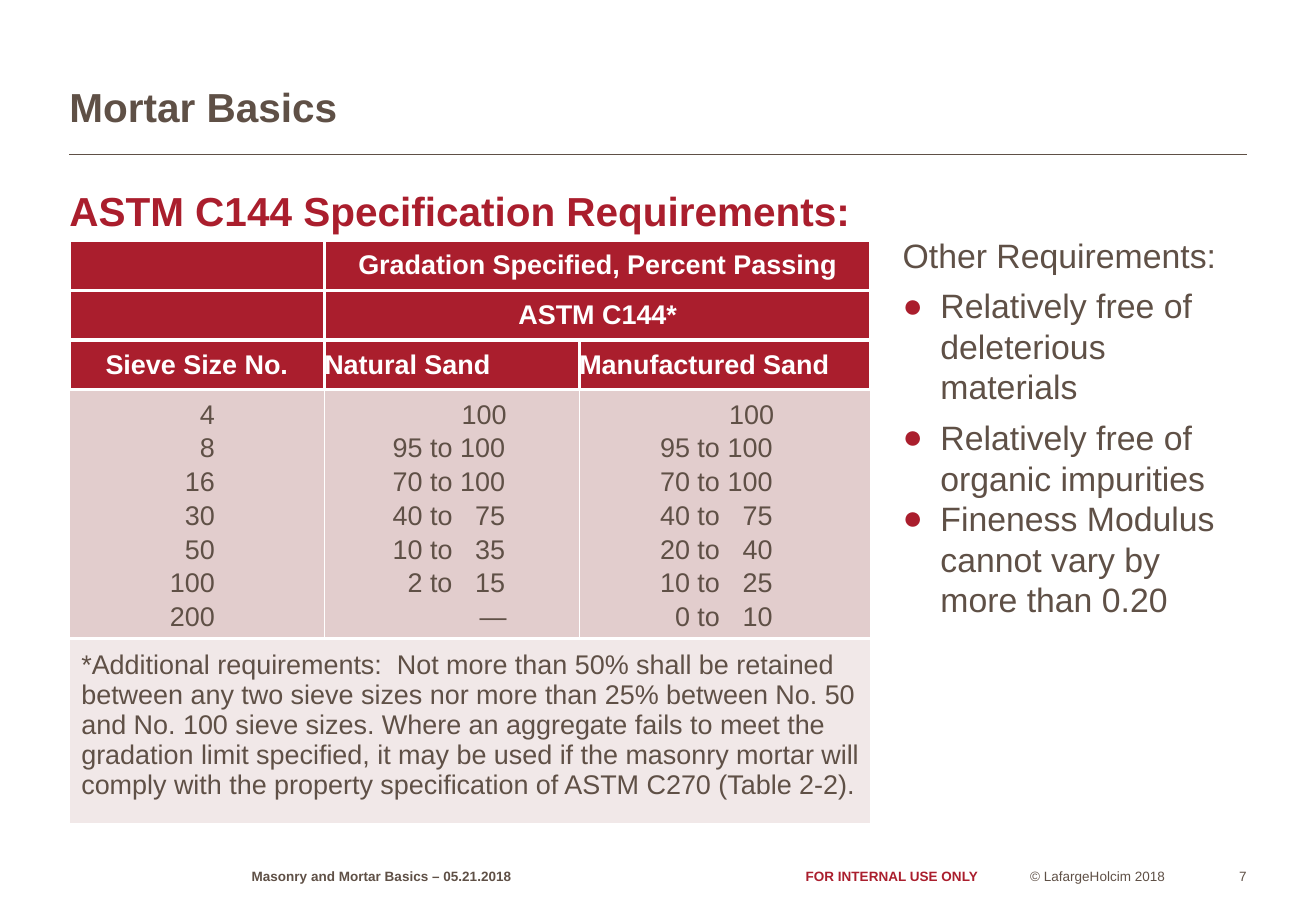
from dataclasses import dataclass

from lxml import etree
from pptx import Presentation
from pptx import util as u
from pptx.dml.color import RGBColor
from pptx.enum import shapes, text
from pptx.oxml import ns

COLORS = {"brown": "5F5046", "red": "AA1E2D", "white": "FFFFFF",
          "rose": "E2CDCD", "pale": "F1E8E8"}
FONT = "Arial"
LEFT, RIGHT = 1.45, 26.06
TABLE_TOP = 5.03
COLUMN_WIDTHS = (5.33, 5.33, 6.1)
ROW_HEIGHTS = (1.04, 1.04, 1.04, 5.18, 3.87)
DATA_ROW, NOTE_ROW = 3, 4
UPPER_LIMIT_WIDTH = 1.1
NO_INSETS = (0, 0, 0, 0)
CENTER, ALIGN_LEFT, ALIGN_RIGHT = (
    text.PP_ALIGN.CENTER, text.PP_ALIGN.LEFT, text.PP_ALIGN.RIGHT)
TOP, MIDDLE, BOTTOM = (
    text.MSO_ANCHOR.TOP, text.MSO_ANCHOR.MIDDLE, text.MSO_ANCHOR.BOTTOM)


@dataclass(frozen=True)
class Label:
    wording: str
    left: float
    top: float
    width: float
    height: float
    size: float = 8
    color: str = "brown"
    bold: bool = False
    align: text.PP_ALIGN = ALIGN_LEFT
    anchor: text.MSO_ANCHOR = BOTTOM
    insets: tuple = NO_INSETS
    line_spacing: float = 1.0


@dataclass(frozen=True)
class Header:
    wording: str
    row: int
    column: int
    align: text.PP_ALIGN = CENTER


@dataclass(frozen=True)
class DataColumn:
    right_inset: float
    values: tuple


@dataclass(frozen=True)
class Requirement:
    wording: str
    space_before: float


FOOTER = {"top": 18.03, "height": 0.46}
LABELS = (
    Label("© LafargeHolcim 2018", 21.01, width=3.35, align=ALIGN_RIGHT, **FOOTER),
    Label("Masonry and Mortar Basics – 05.21.2018", 5.26, width=10.39,
          bold=True, **FOOTER),
    Label("FOR INTERNAL USE ONLY", 15.85, width=4.6, color="red", bold=True,
          align=ALIGN_RIGHT, **FOOTER),
    Label("7", 24.87, width=1.19, align=ALIGN_RIGHT, **FOOTER),
    Label("Mortar Basics", LEFT, 0.53, 24.61, 2.36, 24, bold=True,
          insets=(0, 0, 0.13, 0.13), line_spacing=0.95),
    Label("ASTM C144 Specification Requirements:", LEFT, 3.89, 24.56, 1.7, 24,
          "red", True, anchor=TOP, insets=(0, 0, 0.25, 0.13)),
)
HEADERS = (
    Header("Gradation Specified, Percent Passing", 0, 1),
    Header("ASTM C144*", 1, 1),
    Header("Sieve Size No.", 2, 0),
    Header("Natural Sand", 2, 1, ALIGN_LEFT),
    Header("Manufactured Sand", 2, 2, ALIGN_LEFT),
)
DATA_COLUMNS = (
    DataColumn(2.29, ("4", "8", "16", "30", "50", "100", "200")),
    DataColumn(1.52, ("100", "95 to 100", "70 to 100", "40 to 75",
                      "10 to 35", "2 to 15", "—")),
    DataColumn(2.03, ("100", "95 to 100", "70 to 100", "40 to 75",
                      "20 to 40", "10 to 25", "0 to 10")),
)
NOTE = ("*Additional requirements:  Not more than 50% shall be retained between any "
        "two sieve sizes nor more than 25% between No. 50 and No. 100 sieve sizes. "
        "Where an aggregate fails to meet the gradation limit specified, it may be "
        "used if the masonry mortar will comply with the property specification of "
        "ASTM C270 (Table 2-2).")
REQUIREMENTS = (
    Requirement("Relatively free of deleterious materials", 6),
    Requirement("Relatively free of organic impurities", 6),
    Requirement("Fineness Modulus cannot vary by more than 0.20", 0),
)


def rgb(name: str) -> RGBColor:
    return RGBColor.from_string(COLORS[name])


def add_element(parent, tag: str, **attributes: str):
    return etree.SubElement(parent, ns.qn(tag), attributes)


def add_run(paragraph, wording: str, size: float, color: str, bold: bool = False) -> None:
    run = paragraph.add_run()
    run.text = wording
    run.font.name, run.font.size, run.font.bold = FONT, u.Pt(size), bold
    run.font.color.rgb = rgb(color)


def set_insets(holder, insets: tuple) -> None:
    """Set left, top, right and bottom margins of a cell or a text frame."""
    (holder.margin_left, holder.margin_top,
     holder.margin_right, holder.margin_bottom) = map(u.Cm, insets)


def add_frame(slide, left: float, top: float, width: float, height: float):
    frame = slide.shapes.add_textbox(*map(u.Cm, (left, top, width, height))).text_frame
    frame.word_wrap = True
    return frame


def add_label(slide, label: Label) -> None:
    frame = add_frame(slide, label.left, label.top, label.width, label.height)
    frame.vertical_anchor = label.anchor
    set_insets(frame, label.insets)
    paragraph = frame.paragraphs[0]
    paragraph.alignment = label.align
    paragraph.line_spacing = label.line_spacing
    add_run(paragraph, label.wording, label.size, label.color, label.bold)


def add_title_rule(slide) -> None:
    rule = slide.shapes.add_connector(
        shapes.MSO_CONNECTOR.STRAIGHT, *map(u.Cm, (LEFT, 3.23, RIGHT, 3.23)))
    rule.line.color.rgb = rgb("brown")
    rule.line.width = u.Pt(1)
    add_element(rule._element.spPr, "a:effectLst")


def add_requirements(slide) -> None:
    frame = add_frame(slide, 18.62, 4.78, 7.62, 8.38)
    add_run(frame.paragraphs[0], "Other Requirements:", 20, "brown")
    indent = u.Cm(0.79)
    for requirement in REQUIREMENTS:
        paragraph = frame.add_paragraph()
        properties = paragraph._p.get_or_add_pPr()
        properties.set("marL", str(indent))
        properties.set("indent", str(-indent))
        add_element(add_element(properties, "a:buClr"), "a:srgbClr", val=COLORS["red"])
        add_element(properties, "a:buFont", typeface=FONT)
        add_element(properties, "a:buChar", char="●")
        paragraph.space_before = u.Pt(requirement.space_before)
        add_run(paragraph, requirement.wording, 20, "brown")


def style_cell(cell, row: int) -> None:
    side = 2.25 if row < DATA_ROW else 1
    for edge, width in (("L", side), ("R", side), ("T", 2.25), ("B", 2.25)):
        line = add_element(cell._tc.get_or_add_tcPr(), f"a:ln{edge}", w=str(u.Pt(width)))
        add_element(add_element(line, "a:solidFill"), "a:srgbClr", val=COLORS["white"])
    fill = "red" if row < DATA_ROW else "rose" if row == DATA_ROW else "pale"
    cell.fill.solid()
    cell.fill.fore_color.rgb = rgb(fill)
    set_insets(cell, NO_INSETS)


def fill_data_cell(cell, column: DataColumn, width: float) -> None:
    """Right-align single values; set ranges on two right tab stops."""
    set_insets(cell, (0, 0.13, column.right_inset, 0.13))
    edge = width - column.right_inset - 0.03
    frame = cell.text_frame
    for index, value in enumerate(column.values):
        paragraph = frame.add_paragraph() if index else frame.paragraphs[0]
        lower, separator, upper = value.partition(" to ")
        if separator:
            tabs = add_element(paragraph._p.get_or_add_pPr(), "a:tabLst")
            for stop in (edge - UPPER_LIMIT_WIDTH, edge):
                add_element(tabs, "a:tab", pos=str(u.Cm(stop)), algn="r")
            value = f"\t{lower} to\t{upper}"
        paragraph.alignment = ALIGN_LEFT if separator else ALIGN_RIGHT
        paragraph.line_spacing = u.Pt(20)
        add_run(paragraph, value, 16, "brown")


def add_gradation_table(slide) -> None:
    size = (sum(COLUMN_WIDTHS), sum(ROW_HEIGHTS))
    table = slide.shapes.add_table(
        len(ROW_HEIGHTS), len(COLUMN_WIDTHS),
        *map(u.Cm, (LEFT, TABLE_TOP, *size))).table
    table.first_row = table.horz_banding = False
    for column, width in zip(table.columns, COLUMN_WIDTHS):
        column.width = u.Cm(width)
    for index, (row, height) in enumerate(zip(table.rows, ROW_HEIGHTS)):
        row.height = u.Cm(height)
        for cell in row.cells:
            style_cell(cell, index)
    for row, first in ((0, 1), (1, 1), (NOTE_ROW, 0)):
        table.cell(row, first).merge(table.cell(row, 2))
    for header in HEADERS:
        cell = table.cell(header.row, header.column)
        cell.vertical_anchor = MIDDLE
        paragraph = cell.text_frame.paragraphs[0]
        paragraph.alignment = header.align
        add_run(paragraph, header.wording, 16, "white", True)
    for index, column in enumerate(DATA_COLUMNS):
        fill_data_cell(table.cell(DATA_ROW, index), column, COLUMN_WIDTHS[index])
    note = table.cell(NOTE_ROW, 0)
    set_insets(note, (0.25, 0.25, 0.18, 0.25))
    add_run(note.text_frame.paragraphs[0], NOTE, 16, "brown")


def main() -> None:
    presentation = Presentation()
    presentation.slide_width, presentation.slide_height = u.Cm(27.51), u.Cm(19.05)
    slide = presentation.slides.add_slide(presentation.slide_layouts[6])
    add_title_rule(slide)
    for label in LABELS:
        add_label(slide, label)
    add_requirements(slide)
    add_gradation_table(slide)
    presentation.save("out.pptx")


if __name__ == "__main__":
    main()
